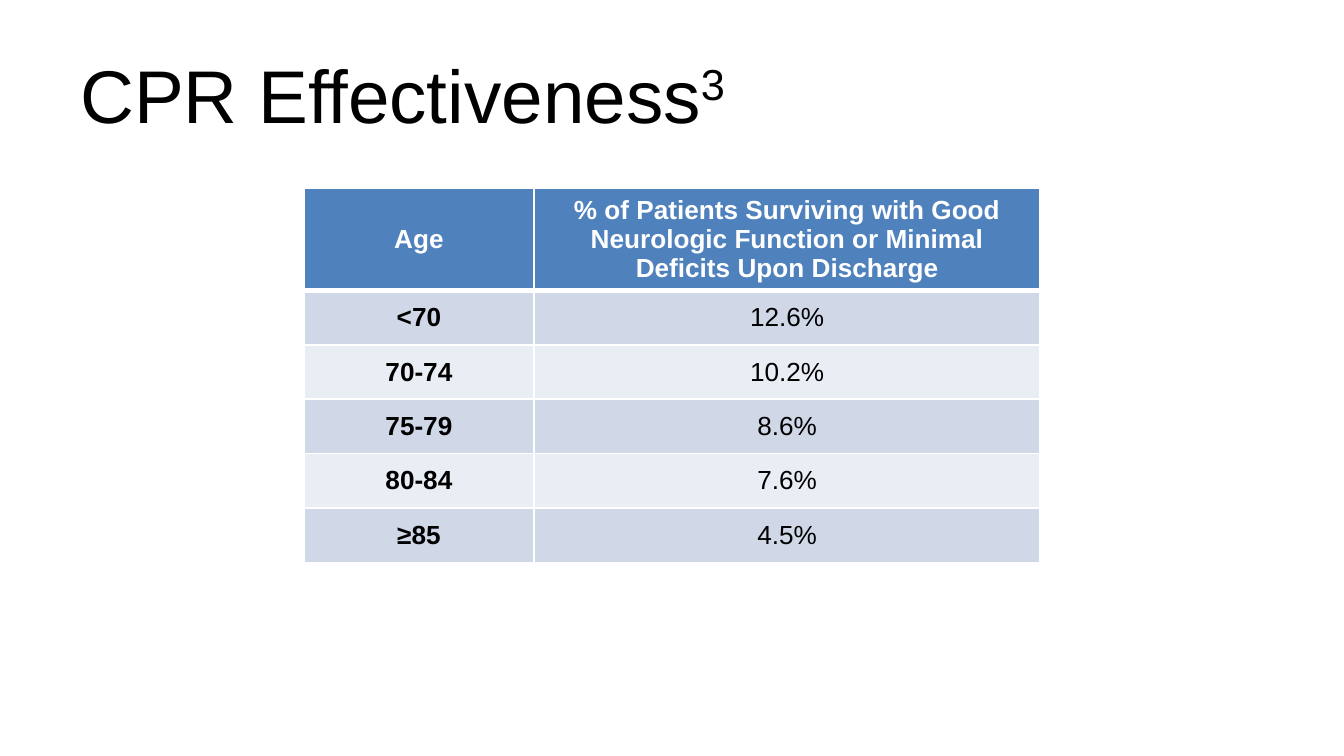
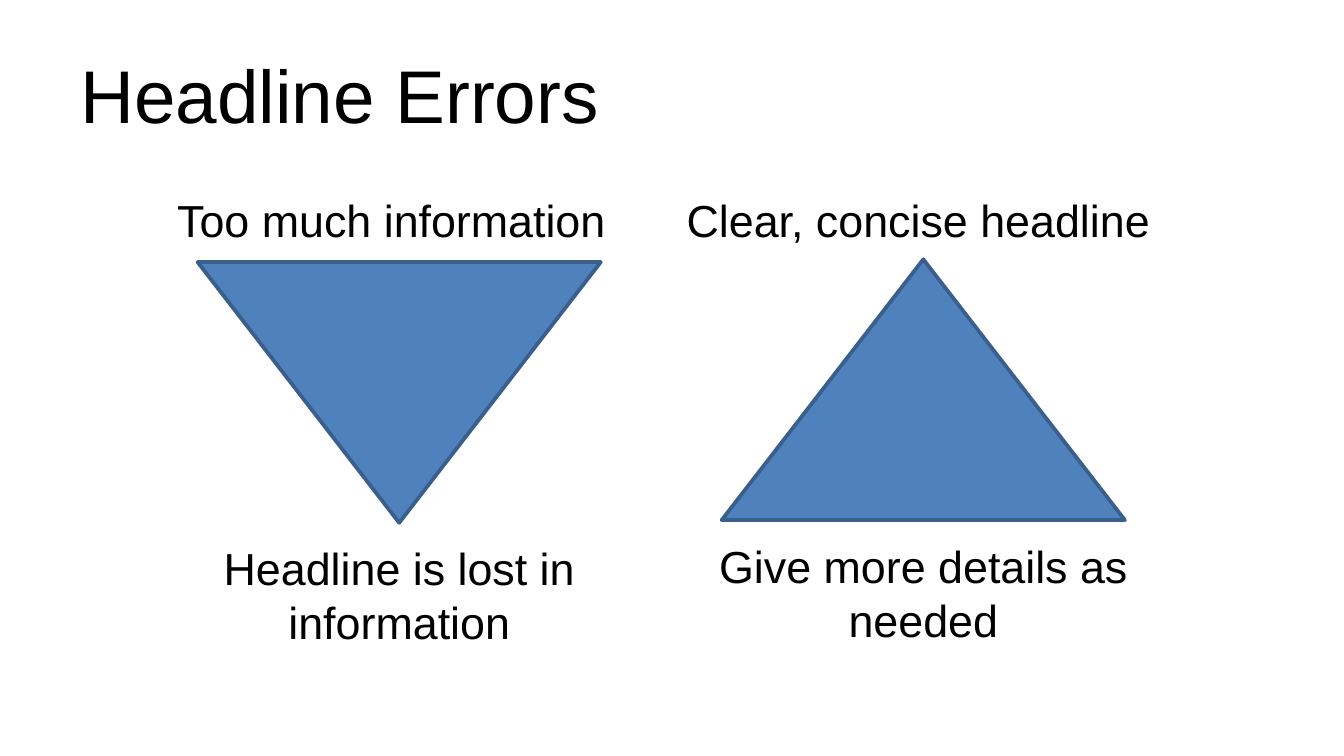
import dataclasses

import lxml.etree
import pptx
import pptx.dml.color
import pptx.enum.shapes
import pptx.enum.text
import pptx.oxml.ns
import pptx.util

EMU_PER_PX = 4572  # 200 px to the inch

ALIGN = pptx.enum.text.PP_ALIGN
ANCHOR = pptx.enum.text.MSO_ANCHOR


@dataclasses.dataclass(frozen=True)
class Theme:
    font: str = "Arial"
    ink: str = "000000"
    paper: str = "FFFFFF"
    accent: str = "4F81BD"
    outline: str = "3A5F8C"
    bands: tuple = ("D0D8E8", "E9EDF4")
    title_size: int = 40
    label_size: int = 24
    table_size: int = 14
    outline_width: int = 2
    rule_width: int = 1
    header_rule_width: int = 3


THEME = Theme()

SURVIVAL = [
    ("Age", "% of Patients Surviving with Good Neurologic Function "
            "or Minimal Deficits Upon Discharge"),
    ("<70", "12.6%"),
    ("70-74", "10.2%"),
    ("75-79", "8.6%"),
    ("80-84", "7.6%"),
    ("≥85", "4.5%"),
]


def px(*lengths):
    return [pptx.util.Emu(length * EMU_PER_PX) for length in lengths]


def rgb(color):
    return pptx.dml.color.RGBColor.from_string(color)


def style_run(run, size, color=THEME.ink, bold=False):
    run.font.name = THEME.font
    run.font.size = pptx.util.Pt(size)
    run.font.bold = bold
    run.font.color.rgb = rgb(color)


def add_text(slide, box, text, size, align=ALIGN.LEFT):
    frame = slide.shapes.add_textbox(*px(*box)).text_frame
    frame.word_wrap = True
    frame.text = text
    line = frame.paragraphs[0]
    line.alignment = align
    style_run(line.runs[0], size)
    return frame


def add_title(slide, text, reference=None):
    title = add_text(slide, (100, 45, 1800, 188), text, THEME.title_size)
    title.vertical_anchor = ANCHOR.MIDDLE
    if reference:
        mark = title.paragraphs[0].add_run()
        mark.text = reference
        style_run(mark, THEME.title_size)
        mark.font._element.set("baseline", "30000")


def add_label(slide, box, text, align=ALIGN.LEFT):
    label = add_text(slide, box, text, THEME.label_size, align)
    label.auto_size = pptx.enum.text.MSO_AUTO_SIZE.SHAPE_TO_FIT_TEXT


def add_triangle(slide, left, top, rotation=0):
    triangle = slide.shapes.add_shape(
        pptx.enum.shapes.MSO_SHAPE.ISOSCELES_TRIANGLE, *px(left, top, 600, 388))
    triangle.rotation = rotation
    triangle.shadow.inherit = False
    triangle.fill.solid()
    triangle.fill.fore_color.rgb = rgb(THEME.accent)
    triangle.line.color.rgb = rgb(THEME.outline)
    triangle.line.width = pptx.util.Pt(THEME.outline_width)


def add_cell_rule(cell, side, width):
    qn = pptx.oxml.ns.qn
    rule = lxml.etree.SubElement(cell._tc.get_or_add_tcPr(), qn(f"a:ln{side}"),
                                 w=str(pptx.util.Pt(width)))
    fill = lxml.etree.SubElement(rule, qn("a:solidFill"))
    lxml.etree.SubElement(fill, qn("a:srgbClr"), val=THEME.paper)


def fill_cell(cell, text, row, column):
    is_header = row == 0
    # Rules: a thicker one separates the header from the body
    widths = dict.fromkeys("LRTB", THEME.rule_width)
    if row < 2:
        widths["B" if is_header else "T"] = THEME.header_rule_width
    for side, width in widths.items():
        add_cell_rule(cell, side, width)
    # Background
    cell.fill.solid()
    cell.fill.fore_color.rgb = rgb(
        THEME.accent if is_header else THEME.bands[(row - 1) % 2])
    # Text
    cell.text_frame.text = text
    cell.vertical_anchor = ANCHOR.MIDDLE
    cell.margin_top, cell.margin_bottom = px(6, 6)
    line = cell.text_frame.paragraphs[0]
    line.alignment = ALIGN.CENTER
    style_run(line.runs[0], THEME.table_size,
              THEME.paper if is_header else THEME.ink,
              bold=is_header or column == 0)


def add_table(slide, left, top, column_widths, row_height, rows):
    table = slide.shapes.add_table(
        len(rows), len(column_widths),
        *px(left, top, sum(column_widths), row_height * len(rows))).table
    for column, width in zip(table.columns, px(*column_widths)):
        column.width = width
    for row, texts in enumerate(rows):
        for column, text in enumerate(texts):
            fill_cell(table.cell(row, column), text, row, column)


def add_slide(deck):
    return deck.slides.add_slide(deck.slide_layouts[6])


def main():
    deck = pptx.Presentation()
    deck.slide_width, deck.slide_height = px(2000, 1125)

    # Survival by age
    effectiveness = add_slide(deck)
    add_title(effectiveness, "CPR Effectiveness", reference="3")
    add_table(effectiveness, 452, 280, (343, 753), 81, SURVIVAL)

    # Headline shapes: inverted and upright
    errors = add_slide(deck)
    add_title(errors, "Headline Errors")
    add_triangle(errors, 1074, 386)
    add_triangle(errors, 294, 390, rotation=180)
    add_label(errors, (244, 277, 700, 100), "Too much information")
    add_label(errors, (1002, 277, 744, 100), "Clear, concise headline")
    add_label(errors, (186, 795, 816, 182), "Headline is lost in information",
              ALIGN.CENTER)
    add_label(errors, (1032, 792, 684, 182), "Give more details as needed",
              ALIGN.CENTER)

    deck.save("out.pptx")


if __name__ == "__main__":
    main()
